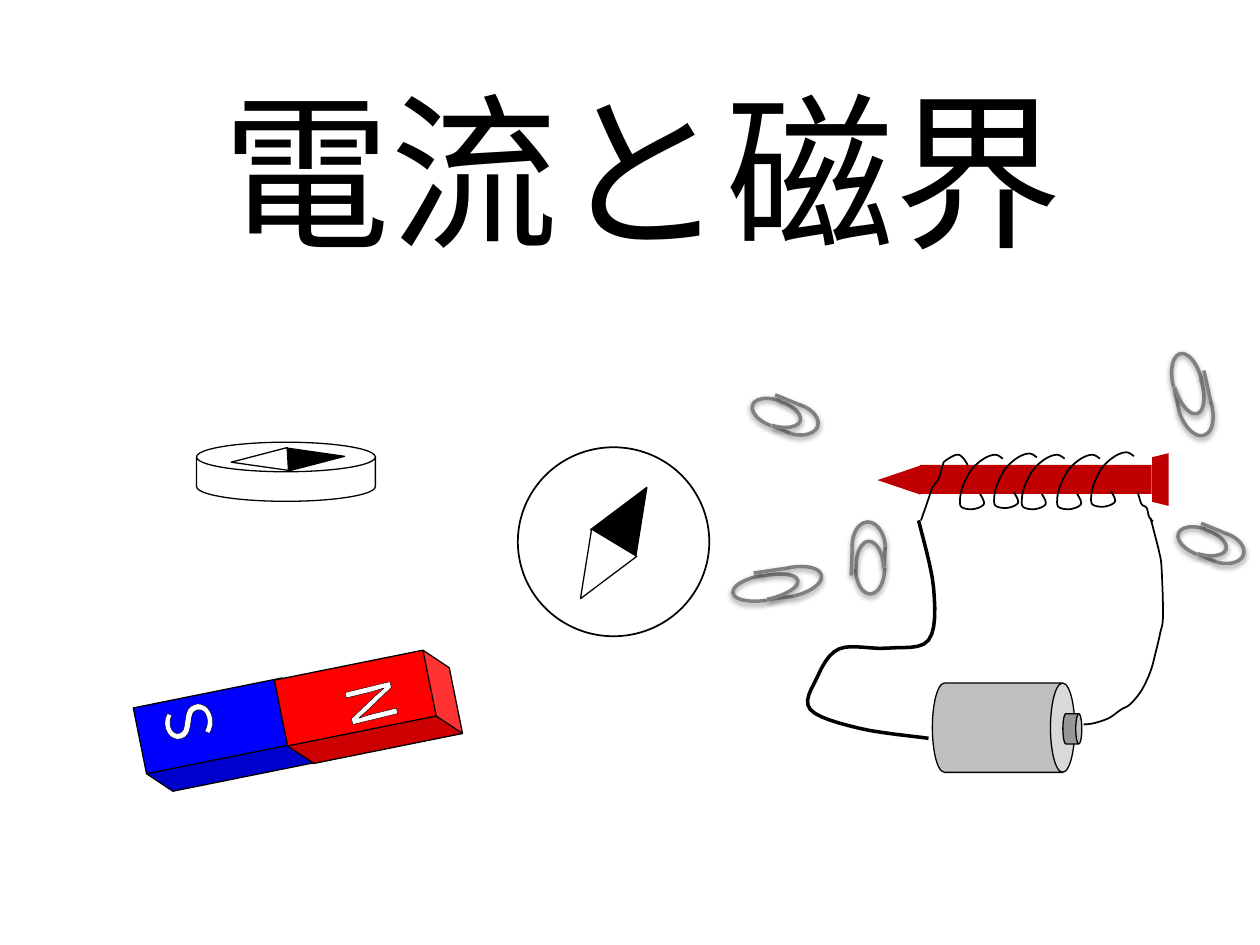
from dataclasses import dataclass
from math import cos, radians, sin
from typing import Optional

from lxml import etree
from pptx import Presentation
from pptx import util as u
from pptx.dml.color import RGBColor
from pptx.enum import shapes, text
from pptx.oxml.ns import qn

COLORS = {"black": "000000", "white": "FFFFFF", "battery": "C0C0C0", "terminal": "969696",
          "south": "0000FF", "north": "FF0000", "nail": "C00000", "clip": "808080"}
KIND = shapes.MSO_SHAPE
Point = tuple[float, float]


@dataclass
class Solid:
    kind: KIND
    left: float
    top: float
    width: float
    height: float
    turn: float = 0
    fill: Optional[str] = None
    line: float = 0.75
    adjust: tuple[float, ...] = ()


@dataclass
class Letter:
    mark: str
    left: float
    top: float
    width: float
    height: float
    turn: float


@dataclass
class Wire:
    points: list[Point]
    weight: float = 1


@dataclass
class Clip:
    x: float
    y: float
    turn: float
    width: float
    height: float

    def place(self, along: float, across: float) -> Point:
        """Page position of a point given in shares of the clip's width and height."""
        angle = radians(self.turn)
        dx, dy = along * self.width, across * self.height
        return (self.x + dx * cos(angle) - dy * sin(angle),
                self.y + dx * sin(angle) + dy * cos(angle))


COMPASS_AND_BATTERY = [
    Solid(KIND.CAN, 112.3, 252.7, 102.2, 33.8, adjust=(0.5,)),
    Solid(KIND.ISOSCELES_TRIANGLE, 174.2, 245.5, 13, 32.4, 86.8, "black"),
    Solid(KIND.ISOSCELES_TRIANGLE, 141.8, 247, 13, 32.4, 266.8, "white"),
    Solid(KIND.CAN, 547.9, 375.1, 51.1, 81.4, 90, "battery", adjust=(0.272,)),
    Solid(KIND.CAN, 604.1, 411.1, 17.3, 10.8, 90, "terminal", adjust=(0.32,)),
]
MAGNET = [
    Solid(KIND.CUBE, 104.4, 370.1, 51.1, 99.4, 78.6, "south"),
    Solid(KIND.CUBE, 185, 354.2, 51.1, 99.4, 78.6, "north"),
]
LETTERS = [Letter("N", 213.8, 383, 16.6, 23, 76.3), Letter("S", 91.4, 403.2, 17.3, 28.1, 254.9)]
DIAL_AND_NAIL = [
    Solid(KIND.ISOSCELES_TRIANGLE, 344.9, 275.8, 30.2, 37.4, 31.1, "black"),
    Solid(KIND.ISOSCELES_TRIANGLE, 326.2, 307.4, 30.2, 37.4, 211.1, "white"),
    Solid(KIND.OVAL, 295.9, 255.6, 109.4, 108, line=1),
    Solid(KIND.RECTANGLE, 525.6, 265.7, 132.5, 16.6, 0, "nail", 0),
    Solid(KIND.ISOSCELES_TRIANGLE, 505.4, 262.1, 16.6, 24.5, 270, "nail", 0),
    Solid(KIND.TRAPEZOID, 648, 269.3, 30.2, 9.4, 270, "nail", 0),
]
LEAD = Wire([(524.9, 297.4), (533.5, 336), (530.6, 365.8), (506.9, 370.4), (479.5, 370.8),
             (466.6, 387.8), (463, 405.4), (491, 416.2), (530.6, 421.9)], 2)
COIL_START = Wire([(526.3, 297.4), (530.6, 285.1), (532.8, 278.6), (536.4, 273.6), (538.6, 266.4),
                   (540, 263.5), (546.5, 259.9), (550.1, 261.4), (553, 265.7)])
COIL_END = Wire([(650.2, 281.5), (652.3, 288), (655.2, 290.2), (656.6, 295.2), (658.8, 298.1)])
RETURN = Wire([(619.2, 414), (625, 413.3), (633.6, 410.4), (640.8, 405.4), (645.8, 402.5),
               (652.3, 394.6), (657.4, 383.8), (660.2, 373.7), (663.1, 361.4), (664.6, 352.1),
               (663.8, 324.7), (662.4, 315.4), (659.5, 303.8), (657.4, 295.9)])
TURN = [(11.5, 22.3), (13.7, 28.1), (7.9, 31), (1.4, 30.2), (0, 26.6), (1.4, 18.7), (6.5, 8.6),
        (13.7, 2.2), (20.2, 0), (24.5, 2.2)]
TURN_ORIGINS = [(548.6, 259.9), (568.1, 259.2), (583.9, 259.9), (604.1, 259.9), (623.5, 258.5)]
COIL_TURNS = [Wire([(left + x, top + y) for x, y in TURN]) for left, top in TURN_ORIGINS]
CLIPS = [
    Clip(497.2, 324.7, 266.4, 31, 15.8),
    Clip(443.2, 236.2, 16.6, 29.5, 14.4),
    Clip(437, 335.9, 347.5, 38.9, 13.7),
    Clip(678.6, 218.9, 72.5, 36.7, 15.8),
    Clip(686.5, 309.6, 16.6, 29.5, 14.4),
]


def color(name: str) -> RGBColor:
    return RGBColor.from_string(COLORS[name])


def set_line(shape, weight: float, name: str = "black") -> None:
    if weight:
        shape.line.color.rgb = color(name)
        shape.line.width = u.Pt(weight)
    else:
        shape.line.fill.background()


def draw_solid(page, solid: Solid, line_color: str = "black"):
    box = page.shapes.add_shape(solid.kind, *map(u.Pt, (solid.left, solid.top,
                                                        solid.width, solid.height)))
    box.rotation = solid.turn
    box.shadow.inherit = False
    for index, value in enumerate(solid.adjust):
        box.adjustments[index] = value
    if solid.fill:
        box.fill.solid()
        box.fill.fore_color.rgb = color(solid.fill)
    else:
        box.fill.background()
    set_line(box, solid.line, line_color)
    return box


def draw_letter(page, letter: Letter) -> None:
    box = page.shapes.add_textbox(*map(u.Pt, (letter.left, letter.top,
                                              letter.width, letter.height)))
    box.rotation = letter.turn
    frame = box.text_frame
    frame.margin_left = frame.margin_right = frame.margin_top = frame.margin_bottom = 0
    frame.word_wrap = False
    frame.text = letter.mark
    frame.paragraphs[0].alignment = text.PP_ALIGN.CENTER
    span = frame.paragraphs[0].runs[0]
    span.font.size = u.Pt(36)
    span.font.name = "Noto Sans CJK JP"
    span.font.color.rgb = color("white")
    outline = etree.Element(qn("a:ln"), w=str(u.Pt(0.75)))
    fill = etree.SubElement(outline, qn("a:solidFill"))
    etree.SubElement(fill, qn("a:srgbClr"), val=COLORS["black"])
    span.font._element.insert(0, outline)


def smooth(points: list[Point], steps: int = 6) -> list[Point]:
    """Catmull-Rom curve through the points."""
    padded = [points[0], *points, points[-1]]
    curve = [points[0]]
    for a, b, c, d in zip(padded, padded[1:], padded[2:], padded[3:]):
        for step in range(1, steps + 1):
            t = step / steps
            curve.append(tuple(
                b[i] + t * (c[i] - a[i]) / 2
                + t ** 2 * (2 * a[i] - 5 * b[i] + 4 * c[i] - d[i]) / 2
                + t ** 3 * (3 * b[i] - a[i] - 3 * c[i] + d[i]) / 2 for i in (0, 1)))
    return curve


def draw_wire(page, wire: Wire) -> None:
    start, *rest = [(u.Pt(x), u.Pt(y)) for x, y in smooth(wire.points)]
    builder = page.shapes.build_freeform(*start)
    builder.add_line_segments(rest, close=False)
    path = builder.convert_to_shape()
    path.shadow.inherit = False
    path.fill.background()
    set_line(path, wire.weight)


def add_soft_shadow(shape) -> None:
    properties = shape._element.spPr
    effects = properties.find(qn("a:effectLst"))
    if effects is None:
        effects = etree.SubElement(properties, qn("a:effectLst"))
    shadow = etree.SubElement(effects, qn("a:outerShdw"), blurRad=str(u.Pt(3.1)),
                              dist=str(u.Pt(1.6)), dir="5400000", rotWithShape="0")
    tone = etree.SubElement(shadow, qn("a:srgbClr"), val=COLORS["black"])
    etree.SubElement(tone, qn("a:alpha"), val="38000")


def draw_clip_arc(page, clip: Clip, along: float, scale: Point, turn: float) -> None:
    x, y = clip.place(along, 0)
    width, height = clip.width * scale[0], clip.height * scale[1]
    half = Solid(KIND.ARC, x - width / 2, y - height / 2, width, height,
                 (clip.turn + turn) % 360, line=2, adjust=(162, 54))
    add_soft_shadow(draw_solid(page, half, "clip"))


def draw_clip_side(page, start: Point, end: Point) -> None:
    side = page.shapes.add_connector(shapes.MSO_CONNECTOR.STRAIGHT, *map(u.Pt, (*start, *end)))
    set_line(side, 2, "clip")
    add_soft_shadow(side)


def draw_clip(page, clip: Clip) -> None:
    draw_clip_side(page, clip.place(0, 0.5), clip.place(0.38, 0.6))
    draw_clip_arc(page, clip, 0, (0.95, 1.05), 183.5)
    draw_clip_arc(page, clip, 0, (1, 1), 0)
    draw_clip_arc(page, clip, 0.38, (0.95, 1.2), 0)
    draw_clip_side(page, clip.place(0.38, -0.6), clip.place(-0.11, -0.7))


def write_title(page) -> None:
    title = page.shapes.title
    title.left, title.top, title.width, title.height = map(u.Pt, (100.8, 37.4, 532.8, 118.1))
    frame = title.text_frame
    frame.text = "電流と磁界"
    frame.auto_size = text.MSO_AUTO_SIZE.NONE
    frame.vertical_anchor = text.MSO_ANCHOR.MIDDLE
    frame.paragraphs[0].alignment = text.PP_ALIGN.CENTER
    font = frame.paragraphs[0].runs[0].font
    font.name, font.size = "Arial", u.Pt(96)
    font.color.rgb = color("black")


def main() -> None:
    deck = Presentation()
    deck.slide_width, deck.slide_height = u.Pt(720), u.Pt(540)
    page = deck.slides.add_slide(deck.slide_layouts[0])
    subtitle = page.placeholders[1]._element
    subtitle.getparent().remove(subtitle)
    write_title(page)
    for draw, items in ((draw_solid, COMPASS_AND_BATTERY), (draw_wire, [LEAD]),
                        (draw_solid, MAGNET), (draw_letter, LETTERS),
                        (draw_solid, DIAL_AND_NAIL),
                        (draw_wire, [COIL_START, *COIL_TURNS, COIL_END, RETURN]),
                        (draw_clip, CLIPS)):
        for item in items:
            draw(page, item)
    deck.save("out.pptx")


if __name__ == "__main__":
    main()
